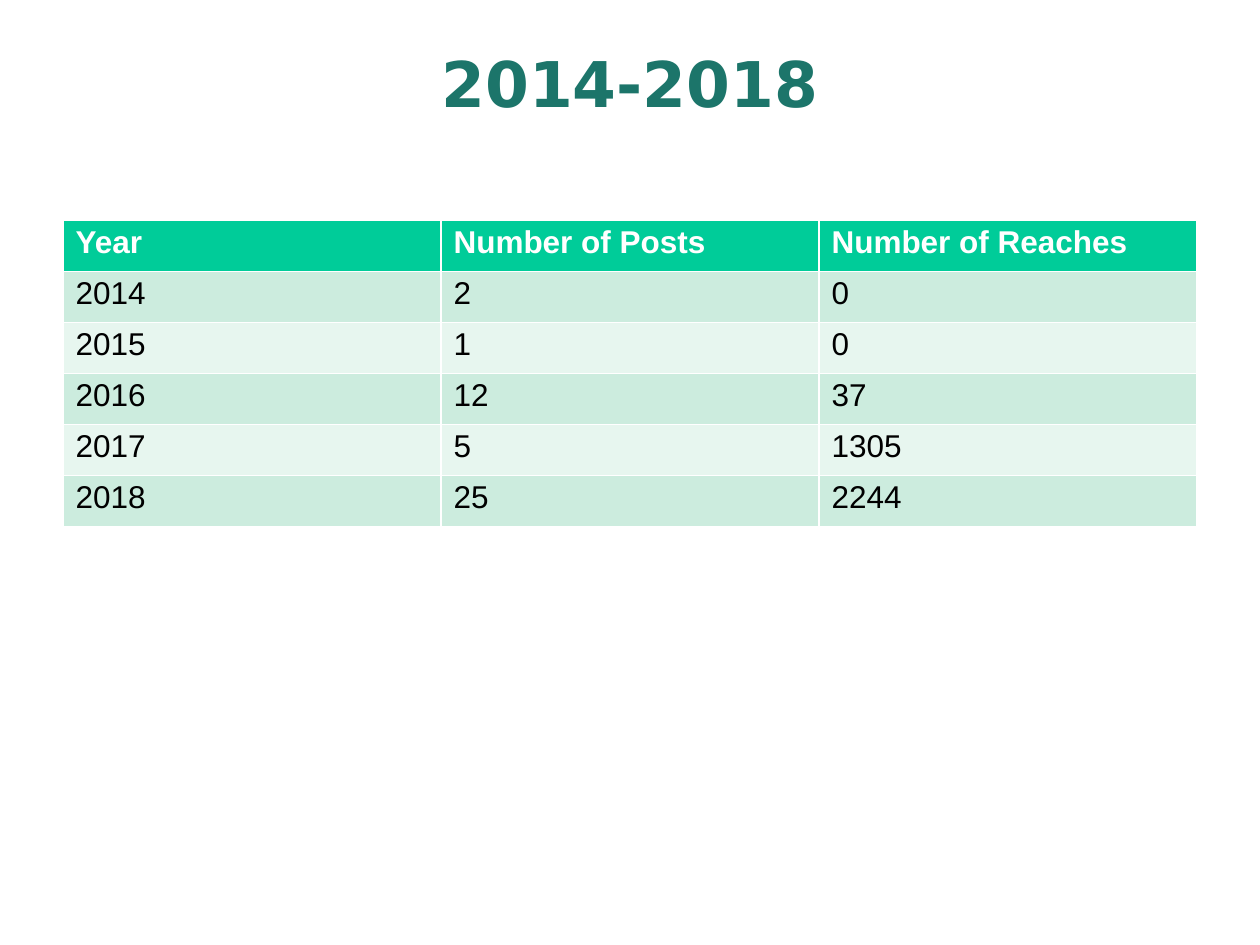
from pptx import Presentation
from pptx.dml.color import RGBColor
from pptx.enum.text import MSO_ANCHOR, PP_ALIGN
from pptx.util import Pt

TEAL = RGBColor(0x1C, 0x75, 0x6A)
GREEN = RGBColor(0x00, 0xCC, 0x99)
BANDS = RGBColor(0xCC, 0xEC, 0xDE), RGBColor(0xE7, 0xF6, 0xEF)
WHITE = RGBColor(0xFF, 0xFF, 0xFF)
BLACK = RGBColor(0x00, 0x00, 0x00)

TITLE = "2014-2018"
ROWS = [
    ("Year", "Number of Posts", "Number of Reaches"),
    ("2014", "2", "0"),
    ("2015", "1", "0"),
    ("2016", "12", "37"),
    ("2017", "5", "1305"),
    ("2018", "25", "2244"),
]
LEFT, WIDTH = 36, 648
TABLE_TOP, ROW_HEIGHT = 126, 29.16


def write(tf, text, size=18, font="Arial", color=BLACK, bold=False,
          align=PP_ALIGN.LEFT, spacing=0.93):
    p = tf.paragraphs[0]
    p.alignment = align
    p.line_spacing = spacing
    r = p.add_run()
    r.text = text
    r.font.size = Pt(size)
    r.font.name = font
    r.font.bold = bold
    r.font.color.rgb = color


prs = Presentation()
prs.slide_width, prs.slide_height = Pt(720), Pt(540)
slide = prs.slides.add_slide(prs.slide_layouts[5])

title = slide.shapes.title
title.left, title.top, title.width, title.height = Pt(LEFT), Pt(21.6), Pt(WIDTH), Pt(90)
title.text_frame.vertical_anchor = MSO_ANCHOR.TOP
write(title.text_frame, TITLE, size=36, font="DejaVu Sans", color=TEAL,
      bold=True, align=PP_ALIGN.CENTER, spacing=1.01)

# The default table style draws the white rules, thicker under the header.
table = slide.shapes.add_table(
    len(ROWS), len(ROWS[0]), Pt(LEFT), Pt(TABLE_TOP),
    Pt(WIDTH), Pt(ROW_HEIGHT * len(ROWS))).table
for i, row in enumerate(ROWS):
    header = i == 0
    for j, text in enumerate(row):
        cell = table.cell(i, j)
        cell.fill.solid()
        cell.fill.fore_color.rgb = GREEN if header else BANDS[(i - 1) % 2]
        write(cell.text_frame, text, color=WHITE if header else BLACK, bold=header)

prs.save("out.pptx")
